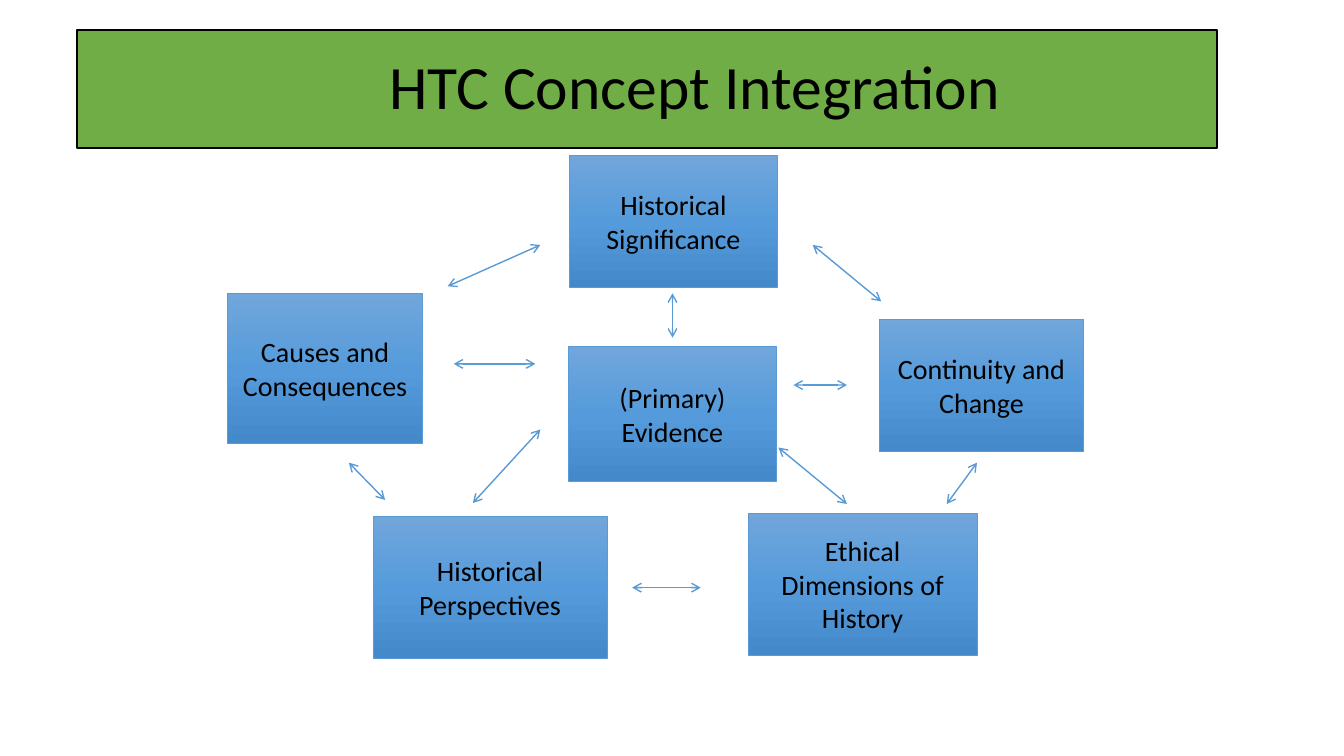
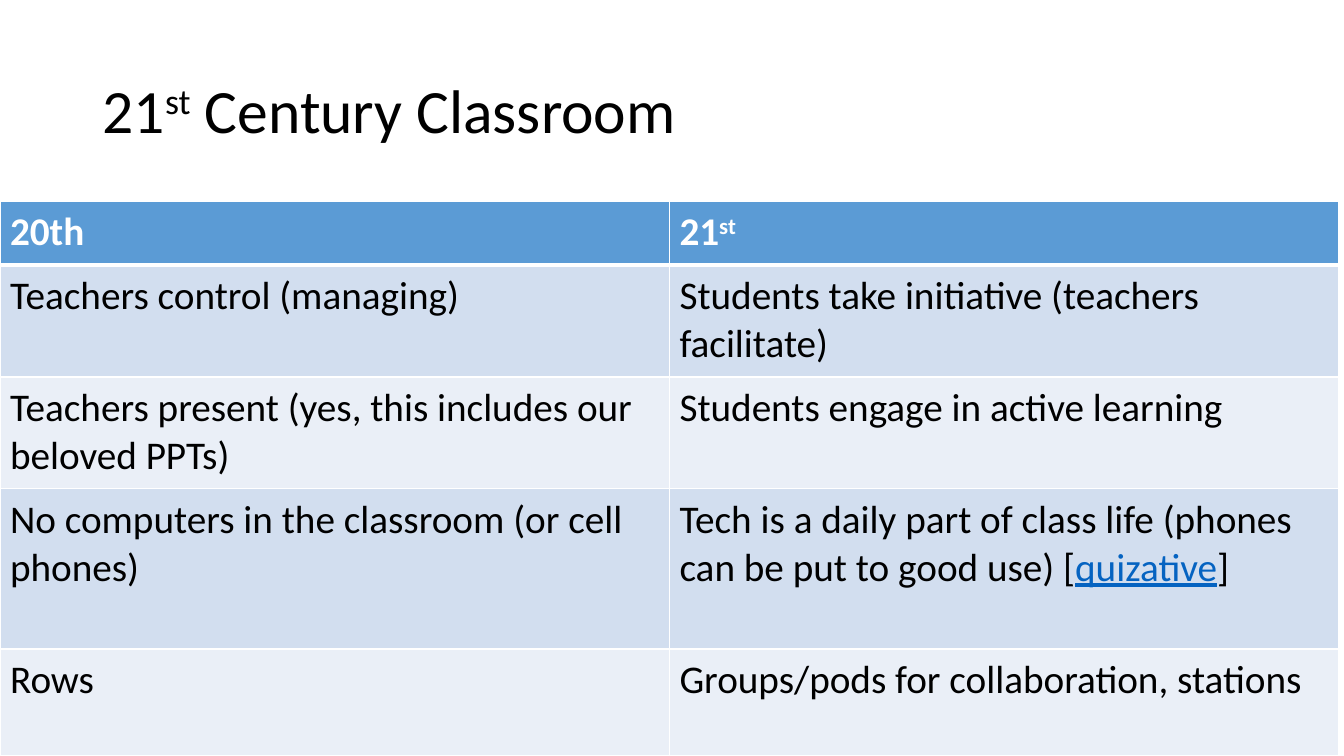
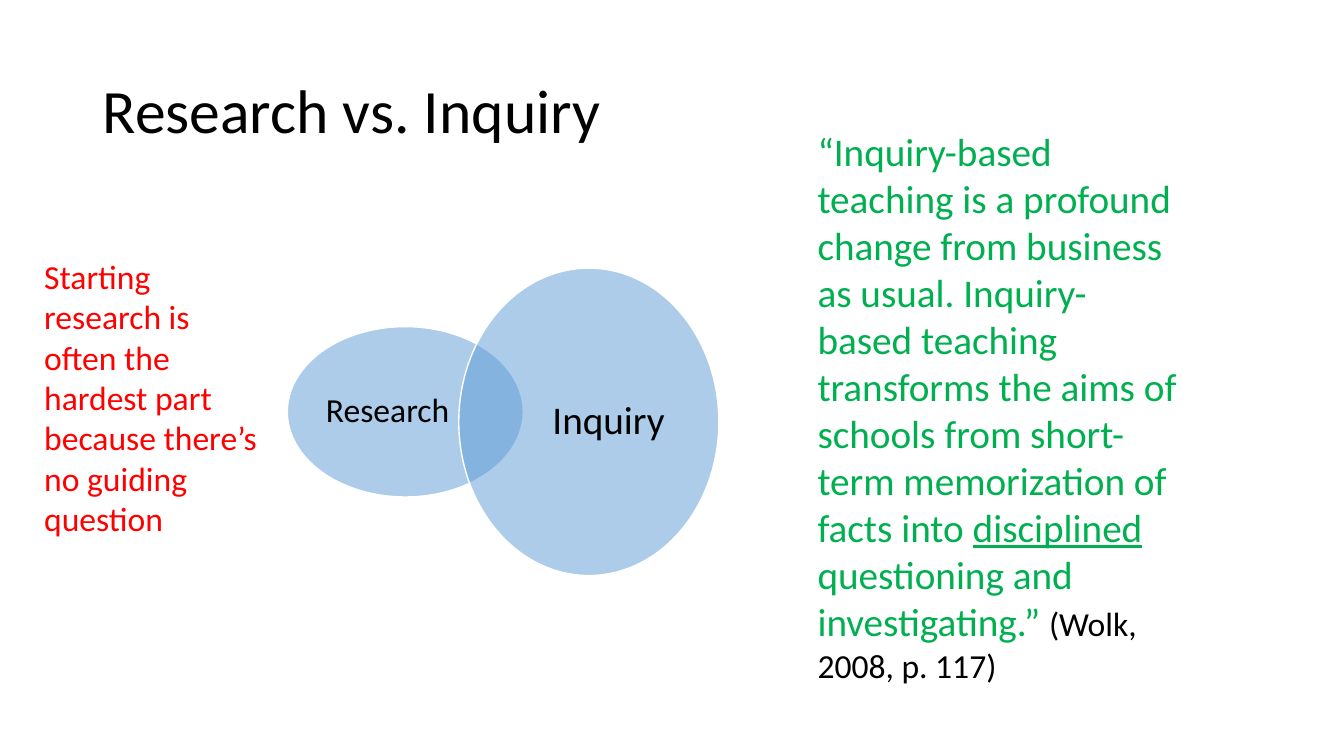
"""Build three slides on historical thinking, the modern classroom and inquiry."""
from copy import deepcopy
from dataclasses import dataclass

from lxml import etree
from pptx import Presentation, util as u
from pptx.dml import color as dml
from pptx.enum import shapes, text
from pptx.oxml import ns

COLOURS = {
    "black": "000000",
    "white": "FFFFFF",
    "blue": "5B9BD5",
    "blue_top": "71A6DB",
    "blue_middle": "559BDB",
    "blue_bottom": "448ACA",
    "band_dark": "D2DEEF",
    "band_light": "EAEFF7",
    "title_green": "70AD47",
    "quote_green": "00B050",
    "red": "FF0000",
    "link": "0563C1",
}
GRADIENT = ((0, "blue_top"), (0.5, "blue_middle"), (1, "blue_bottom"))
TITLE_PARAGRAPH = {"line_spacing": 0.9}
CENTRED = {"alignment": text.PP_ALIGN.CENTER}
MIDDLE = {"vertical_anchor": text.MSO_ANCHOR.MIDDLE}
NO_MARGINS = dict.fromkeys(
    ("margin_left", "margin_top", "margin_right", "margin_bottom"), u.Inches(0))
CELL_MARGINS = {
    "margin_left": u.Inches(0.1), "margin_right": u.Inches(0.1),
    "margin_top": u.Inches(0.07), "margin_bottom": u.Inches(0.07),
}


@dataclass(frozen=True)
class Box:
    left: float
    top: float
    width: float
    height: float

    def lengths(self) -> list:
        return [u.Inches(side) for side in (self.left, self.top, self.width, self.height)]


@dataclass(frozen=True)
class Run:
    words: str
    size: float
    colour: str = "black"
    bold: bool = False
    underline: bool = False
    raised: bool = False


@dataclass(frozen=True)
class Concept:
    label: str
    box: Box


@dataclass(frozen=True)
class Arrow:
    start: tuple[float, float]
    end: tuple[float, float]


@dataclass(frozen=True)
class VennCircle:
    box: Box
    label: Run
    label_box: Box


TITLE_BOX = Box(0.92, 0.4, 11.5, 1.45)
BANNER_BOX = Box(0.76, 0.3, 11.31, 1.17)

CONCEPTS = (
    Concept("(Primary) Evidence", Box(5.64, 3.44, 2.06, 1.34)),
    Concept("Continuity and Change", Box(8.72, 3.17, 2.03, 1.31)),
    Concept("Ethical Dimensions of History", Box(7.42, 5.09, 2.27, 1.41)),
    Concept("Historical Perspectives", Box(3.7, 5.12, 2.32, 1.41)),
    Concept("Causes and Consequences", Box(2.26, 2.91, 1.93, 1.49)),
    Concept("Historical Significance", Box(5.65, 1.54, 2.06, 1.31)),
)
ARROWS = (
    Arrow((4.5, 3.61), (5.31, 3.61)),
    Arrow((5.36, 4.26), (4.69, 4.99)),
    Arrow((6.67, 2.91), (6.67, 3.35)),
    Arrow((9.39, 5), (9.69, 4.59)),
    Arrow((7.72, 4.44), (8.4, 5)),
    Arrow((7.87, 3.82), (8.4, 3.82)),
    Arrow((8.06, 2.43), (8.74, 2.99)),
    Arrow((3.46, 4.59), (3.82, 4.96)),
    Arrow((6.27, 5.83), (6.95, 5.83)),
    Arrow((4.44, 2.84), (5.36, 2.43)),
)
HEADINGS = (
    [Run("20th", 28, "white", bold=True)],
    [Run("21", 28, "white", bold=True), Run("st", 28, "white", bold=True, raised=True)],
)
COMPARISONS = (
    ("Teachers control (managing)", "Students take initiative (teachers facilitate)"),
    ("Teachers present (yes, this includes our beloved PPTs)",
     "Students engage in active learning"),
    ("No computers in the classroom (or cell phones)",
     "Tech is a daily part of class life (phones can be put to good use) [|quizative|]"),
    ("Rows", "Groups/pods for collaboration, stations"),
)
ROW_HEIGHTS = (0.63, 1.11, 1.11, 1.59, 1.06)
COLUMN_WIDTH = 6.64
VENN = (
    VennCircle(Box(2.85, 3.24, 2.34, 1.69), Run("Research", 24), Box(3.17, 3.44, 1.35, 1.29)),
    VennCircle(Box(4.55, 2.66, 2.58, 3.05), Run("Inquiry", 28), Box(5.29, 3.02, 1.49, 2.33)),
)
QUOTE = (
    Run("“Inquiry-based teaching is a profound change from business as usual. "
        "Inquiry-based teaching transforms the aims of schools from short-term "
        "memorization of facts into ", 28, "quote_green"),
    Run("disciplined", 28, "quote_green", underline=True),
    Run(" questioning and investigating.” ", 28, "quote_green"),
    Run("(Wolk, 2008, p. 117)", 24),
)
REMARK = (Run("Starting research is often the hardest part because there’s "
              "no guiding question", 24, "red"),)


def rgb(name: str) -> dml.RGBColor:
    return dml.RGBColor.from_string(COLOURS[name])


def apply(target, formats: dict) -> None:
    for name, value in formats.items():
        setattr(target, name, value)


def write(frame, runs, paragraph_formats: dict, frame_formats: dict) -> None:
    apply(frame, {"word_wrap": True} | frame_formats)
    paragraph = frame.paragraphs[0]
    apply(paragraph, paragraph_formats)
    for item in runs:
        run = paragraph.add_run()
        run.text = item.words
        apply(run.font, {"name": "Calibri", "size": u.Pt(item.size),
                         "bold": item.bold, "underline": item.underline})
        run.font.color.rgb = rgb(item.colour)
        if item.raised:
            run._r.get_or_add_rPr().set("baseline", "30000")


def add_text(slide, box: Box, runs, paragraph_formats: dict, frame_formats: dict) -> None:
    shape = slide.shapes.add_textbox(*box.lengths())
    write(shape.text_frame, runs, paragraph_formats, frame_formats)


def add_outlined(slide, kind, box: Box, line: str, width: float):
    shape = slide.shapes.add_shape(kind, *box.lengths())
    shape.shadow.inherit = False
    shape.line.color.rgb = rgb(line)
    shape.line.width = u.Pt(width)
    return shape


def fill_solid(target, colour: str) -> None:
    target.fill.solid()
    target.fill.fore_color.rgb = rgb(colour)


def add_title(slide, *runs: Run) -> None:
    add_text(slide, TITLE_BOX, runs, TITLE_PARAGRAPH, MIDDLE)


def add_banner(slide, words: str) -> None:
    shape = add_outlined(slide, shapes.MSO_SHAPE.RECTANGLE, BANNER_BOX, "black", 1.5)
    fill_solid(shape, "title_green")
    write(shape.text_frame, [Run(words, 44)],
          TITLE_PARAGRAPH | {"alignment": text.PP_ALIGN.LEFT},
          MIDDLE | {"margin_left": u.Inches(3.1)})


def add_concept(slide, concept: Concept) -> None:
    shape = add_outlined(slide, shapes.MSO_SHAPE.RECTANGLE, concept.box, "blue", 0.5)
    shape.fill.gradient()
    shape.fill.gradient_angle = 270
    stop_list = shape.element.spPr.find(".//" + ns.qn("a:gsLst"))
    stop_list.insert(1, deepcopy(stop_list[0]))
    for stop, (position, colour) in zip(shape.fill.gradient_stops, GRADIENT):
        stop.position = position
        stop.color.rgb = rgb(colour)
    write(shape.text_frame, [Run(concept.label, 20)], CENTRED, MIDDLE)


def add_arrow(slide, arrow: Arrow) -> None:
    ends = [u.Inches(value) for value in arrow.start + arrow.end]
    connector = slide.shapes.add_connector(shapes.MSO_CONNECTOR.STRAIGHT, *ends)
    connector.line.color.rgb = rgb("blue")
    connector.line.width = u.Pt(1)
    properties = connector.element.spPr
    for end in ("a:headEnd", "a:tailEnd"):
        etree.SubElement(properties.find(ns.qn("a:ln")), ns.qn(end), type="arrow")
    etree.SubElement(properties, ns.qn("a:effectLst"))


def add_borders(cell, bottom: float) -> None:
    properties = cell._tc.get_or_add_tcPr()
    for side, width in (("L", 1), ("R", 1), ("T", 1), ("B", bottom)):
        line = etree.SubElement(properties, ns.qn(f"a:ln{side}"), w=str(int(u.Pt(width))))
        solid = etree.SubElement(line, ns.qn("a:solidFill"))
        etree.SubElement(solid, ns.qn("a:srgbClr"), val=COLOURS["white"])


def split_link(words: str) -> list[Run]:
    return [Run(part, 28, "link", underline=True) if index % 2 else Run(part, 28)
            for index, part in enumerate(words.split("|"))]


def add_comparison(slide) -> None:
    rows = [HEADINGS] + [[split_link(words) for words in row] for row in COMPARISONS]
    box = Box(0, 2, 2 * COLUMN_WIDTH, sum(ROW_HEIGHTS))
    table = slide.shapes.add_table(len(rows), 2, *box.lengths()).table
    for column in table.columns:
        column.width = u.Inches(COLUMN_WIDTH)
    for index, (row, height) in enumerate(zip(rows, ROW_HEIGHTS)):
        table.rows[index].height = u.Inches(height)
        band = "band_dark" if index % 2 else "band_light"
        for cell, runs in zip(table.rows[index].cells, row):
            apply(cell, CELL_MARGINS)
            add_borders(cell, 1 if index else 3)
            fill_solid(cell, band if index else "blue")
            write(cell.text_frame, runs, {}, {})


def add_venn_circle(slide, circle: VennCircle) -> None:
    shape = add_outlined(slide, shapes.MSO_SHAPE.OVAL, circle.box, "white", 1)
    fill_solid(shape, "blue")
    colour = shape.element.spPr.find(ns.qn("a:solidFill"))[0]
    etree.SubElement(colour, ns.qn("a:alpha"), val="50000")
    add_text(slide, circle.label_box, [circle.label],
             CENTRED | TITLE_PARAGRAPH, MIDDLE | NO_MARGINS)


def build_concepts(slide) -> None:
    for concept in CONCEPTS:
        add_concept(slide, concept)
    add_banner(slide, "HTC Concept Integration")
    for arrow in ARROWS:
        add_arrow(slide, arrow)


def build_classroom(slide) -> None:
    add_title(slide, Run("21", 44), Run("st", 44, raised=True), Run(" Century Classroom", 44))
    add_comparison(slide)


def build_inquiry(slide) -> None:
    add_title(slide, Run("Research vs. Inquiry", 44))
    for circle in VENN:
        add_venn_circle(slide, circle)
    add_text(slide, Box(8.01, 1.21, 3.78, 6.29), QUOTE, {}, {})
    add_text(slide, Box(0.34, 2.49, 2.4, 2.93), REMARK, {}, {})


def main() -> None:
    presentation = Presentation()
    presentation.slide_width = u.Inches(13.33)
    presentation.slide_height = u.Inches(7.5)
    for build in (build_concepts, build_classroom, build_inquiry):
        build(presentation.slides.add_slide(presentation.slide_layouts[6]))
    presentation.save("out.pptx")


if __name__ == "__main__":
    main()
